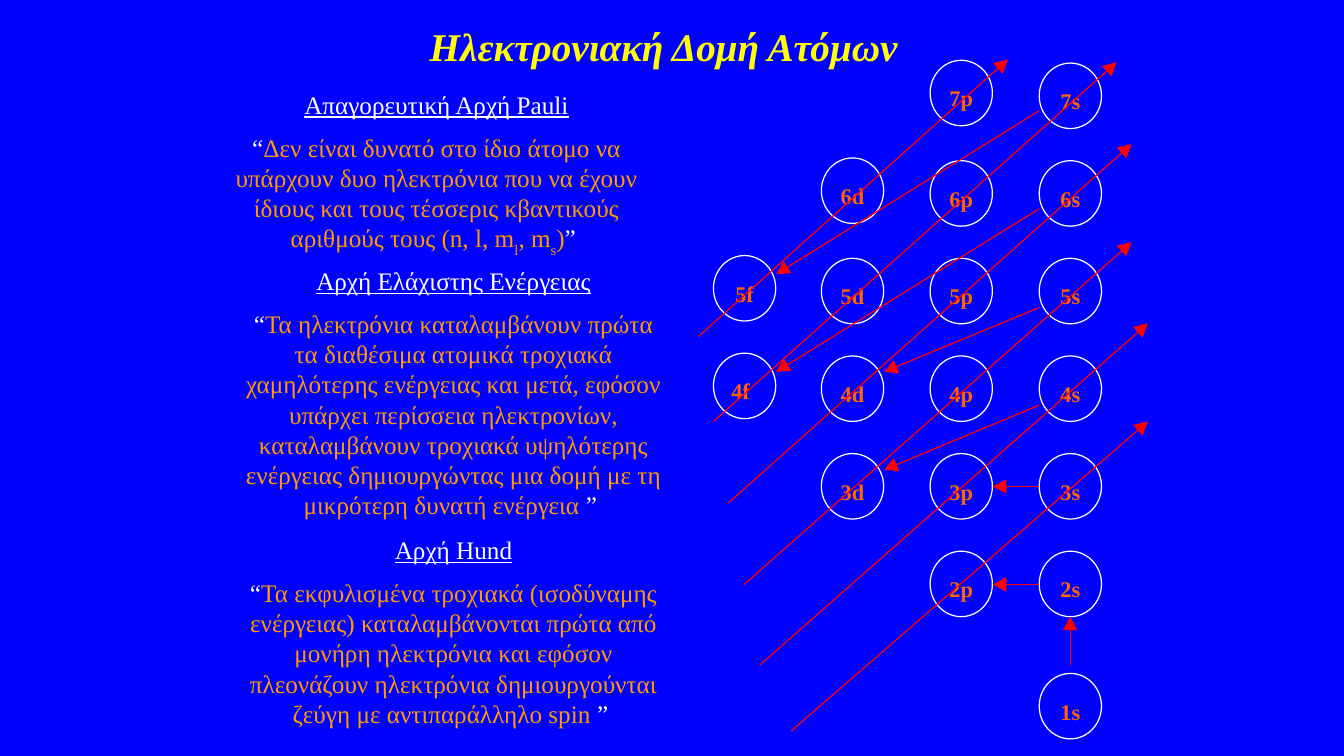
import math
import pptx
import pptx.util
import pptx.dml.color
import pptx.enum.shapes
import pptx.enum.text
import pptx.oxml
import lxml.etree

Cm, Pt = pptx.util.Cm, pptx.util.Pt
WHITE, ORANGE, RED = "FFFFFF", "FF9900", "FF0000"


def color(hex_string):
    return pptx.dml.color.RGBColor.from_string(hex_string)


def write(para, text, size=18, fill=WHITE, bold=False, italic=False,
          underline=False, baseline=0):
    para.alignment = pptx.enum.text.PP_ALIGN.CENTER
    span = para.add_run()
    span.text = text
    font = span.font
    font.name, font.size = "Times New Roman", Pt(size)
    font.bold, font.italic, font.underline = bold, italic, underline
    font.color.rgb = color(fill)
    if baseline:
        font._element.set("baseline", str(baseline * 1000))


deck = pptx.Presentation()
deck.slide_width, deck.slide_height = Cm(33.87), Cm(19.05)
page = deck.slides.add_slide(deck.slide_layouts[6])
page.background.fill.solid()
page.background.fill.fore_color.rgb = color("0000FF")

# Title
title = page.shapes.add_textbox(Cm(5.93), Cm(0.42), Cm(21.59), Cm(1.48))
title.text_frame.word_wrap = True
title.text_frame.vertical_anchor = pptx.enum.text.MSO_ANCHOR.MIDDLE
write(title.text_frame.paragraphs[0], "Ηλεκτρονιακή Δομή Ατόμων",
      size=28, fill="FFFF00", bold=True, italic=True)

# Principles: left, top, height, heading, body as (text, baseline) pieces
principles = [
    (5.5, 2.12, 4.45, "Απαγορευτική Αρχή Pauli",
     [("Δεν είναι δυνατό στο ίδιο άτομο να υπάρχουν δυο ηλεκτρόνια που να "
       "έχουν ίδιους και τους τέσσερις κβαντικούς αριθμούς τους (n, l, m", 0),
      ("l", -30), (", m", 0), ("s", -30), (")", 0)]),
    (5.93, 6.56, 6.73, "Αρχή Ελάχιστης Ενέργειας",
     [("Τα ηλεκτρόνια καταλαμβάνουν πρώτα τα διαθέσιμα ατομικά τροχιακά "
       "χαμηλότερης ενέργειας και μετά, εφόσον υπάρχει περίσσεια ηλεκτρονίων, "
       "καταλαμβάνουν τροχιακά υψηλότερης ενέργειας δημιουργώντας μια δομή "
       "με τη μικρότερη δυνατή ενέργεια ", 0)]),
    (5.93, 13.34, 5.21, "Αρχή Hund",
     [("Τα εκφυλισμένα τροχιακά (ισοδύναμης ενέργειας) καταλαμβάνονται πρώτα "
       "από μονήρη ηλεκτρόνια και εφόσον πλεονάζουν ηλεκτρόνια "
       "δημιουργούνται ζεύγη με αντιπαράλληλο spin ", 0)]),
]
for left, top, height, heading, body in principles:
    box = page.shapes.add_textbox(Cm(left), Cm(top), Cm(11), Cm(height))
    box.text_frame.word_wrap = True
    para = box.text_frame.paragraphs[0]
    para.space_before = Pt(9)
    write(para, heading, underline=True)
    para = box.text_frame.add_paragraph()
    para.space_before = Pt(9)
    write(para, "“")
    for text, baseline in body:
        write(para, text, fill=ORANGE, baseline=baseline)
    write(para, "” ")

# Orbitals: one column per subshell, one row per shell
columns = {"s": (26.19, range(1, 8)), "p": (23.44, range(2, 8)),
           "d": (20.7, range(3, 7)), "f": (17.98, range(4, 6))}
raised = {"7p", "6d", "5f", "4f"}
for subshell, (left, shells) in columns.items():
    for shell in shells:
        name = f"{shell}{subshell}"
        top = 16.97 if shell == 1 else 13.89 - 2.46 * (shell - 2)
        if name in raised:
            top -= 0.07
        orbital = page.shapes.add_shape(
            pptx.enum.shapes.MSO_SHAPE.OVAL, Cm(left), Cm(top), Cm(1.57), Cm(1.65))
        orbital.shadow.inherit = False
        orbital.fill.background()
        orbital.line.color.rgb = color(WHITE)
        orbital.line.width = Pt(0.88)
        frame = orbital.text_frame
        frame.word_wrap = False
        frame.vertical_anchor = pptx.enum.text.MSO_ANCHOR.MIDDLE
        frame.margin_left = frame.margin_bottom = 0
        frame.margin_top = Cm(0.25)
        frame.margin_right = Cm(0.2 if name == "4f" else 0)
        write(frame.paragraphs[0], name, size=16, fill="FF6600", bold=True)

# Filling order: start x, start y, tip x, tip y
arrows = [
    (26.97, 16.76, 26.97, 15.54), (26.19, 14.73, 25.02, 14.73),
    (26.19, 12.26, 25.02, 12.26),
    (19.94, 18.42, 28.93, 10.62), (19.15, 16.76, 28.93, 8.15),
    (18.75, 14.73, 28.52, 6.1), (18.36, 12.67, 28.52, 3.63),
    (17.98, 10.62, 28.14, 1.57), (17.6, 8.48, 25.4, 1.5),
    (26.19, 10.21, 22.28, 11.84), (26.19, 7.75, 22.28, 9.37),
    (26.19, 5.26, 19.56, 9.37), (26.19, 2.79, 19.56, 6.91),
]
HEAD_LENGTH, HEAD_HALF = 0.34, 0.18
for start_x, start_y, tip_x, tip_y in arrows:
    length = math.hypot(tip_x - start_x, tip_y - start_y)
    along_x, along_y = (tip_x - start_x) / length, (tip_y - start_y) / length
    base_x, base_y = tip_x - HEAD_LENGTH * along_x, tip_y - HEAD_LENGTH * along_y

    shaft = page.shapes.add_connector(
        pptx.enum.shapes.MSO_CONNECTOR.STRAIGHT,
        Cm(start_x), Cm(start_y), Cm(base_x), Cm(base_y))
    shaft.line.color.rgb = color(RED)
    shaft.line.width = Pt(0.88)
    lxml.etree.SubElement(shaft._element.spPr, pptx.oxml.ns.qn("a:effectLst"))

    side_x, side_y = HEAD_HALF * along_y, HEAD_HALF * along_x
    outline = page.shapes.build_freeform(Cm(base_x - side_x), Cm(base_y + side_y))
    outline.add_line_segments([(Cm(tip_x), Cm(tip_y)),
                               (Cm(base_x + side_x), Cm(base_y - side_y))], close=True)
    head = outline.convert_to_shape()
    head.shadow.inherit = False
    head.fill.solid()
    head.fill.fore_color.rgb = color(RED)
    head.line.fill.background()

deck.save("out.pptx")
